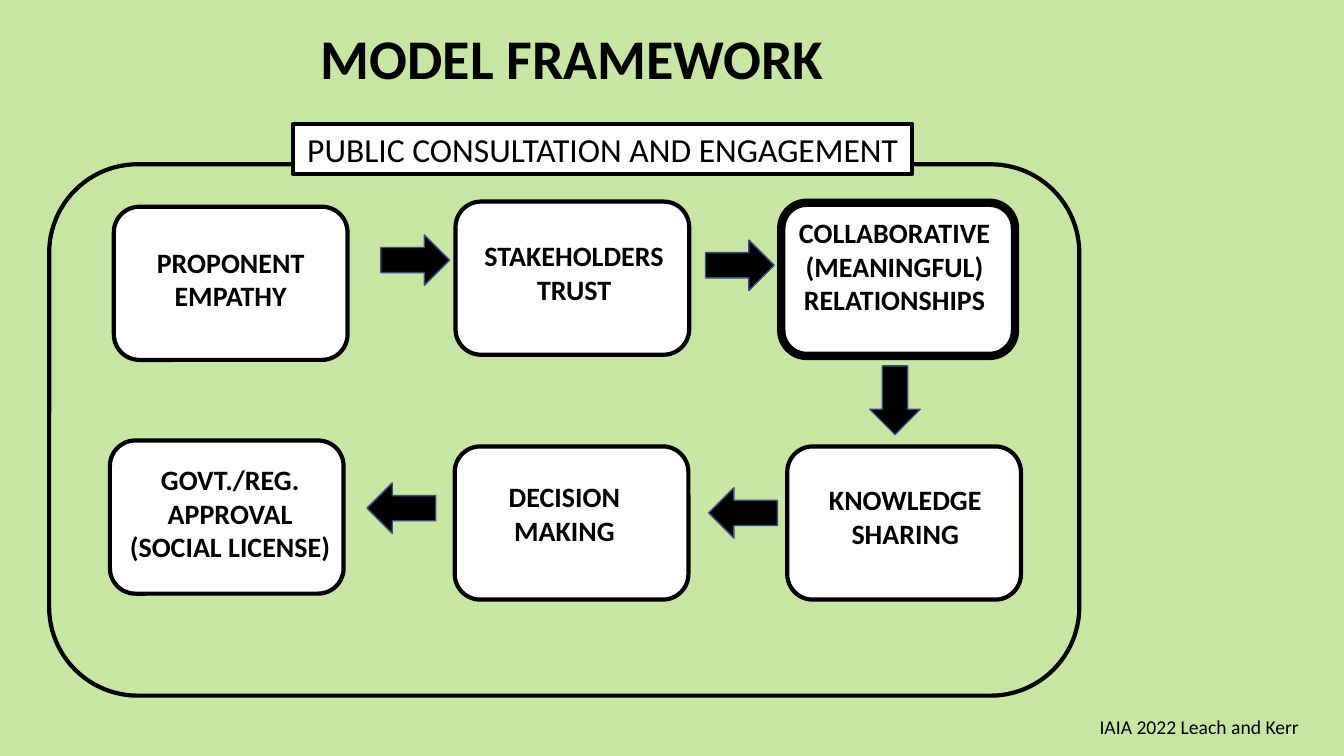
from pptx import Presentation, util as u
from pptx.dml.color import RGBColor
from pptx.enum import shapes, text

SHAPE = shapes.MSO_SHAPE
CENTER, LEFT = text.PP_ALIGN.CENTER, text.PP_ALIGN.LEFT
BLACK, WHITE, GREEN, NAVY = "000000", "FFFFFF", "C7E6A4", "374B7F"


def color(value):
    return RGBColor.from_string(value)


class Diagram:
    """Holds the font, the common sizes and the current slide."""
    font = "Calibri"
    step_size = (5.89, 3.86)
    arrow_size = (1.73, 1.27)

    def __init__(self, slide):
        self.slide = slide
        slide.background.fill.solid()
        slide.background.fill.fore_color.rgb = color(GREEN)

    def shape(self, kind, box, fill=None, line=BLACK, weight=3):
        shape = self.slide.shapes.add_shape(kind, *map(u.Cm, box))
        shape.shadow.inherit = False
        if fill:
            shape.fill.solid()
            shape.fill.fore_color.rgb = color(fill)
        else:
            shape.fill.background()
        shape.line.color.rgb = color(line)
        shape.line.width = u.Pt(weight)
        return shape

    def set_words(self, shape, words, size, bold=False, align=CENTER):
        frame = shape.text_frame
        frame.text = words
        frame.word_wrap = True
        frame.vertical_anchor = text.MSO_ANCHOR.TOP
        for paragraph in frame.paragraphs:
            paragraph.alignment = align
            for run in paragraph.runs:
                run.font.name = self.font
                run.font.size = u.Pt(size)
                run.font.bold = bold
                run.font.color.rgb = color(BLACK)

    def label(self, box, words, size=20, bold=True, align=CENTER):
        shape = self.slide.shapes.add_textbox(*map(u.Cm, box))
        self.set_words(shape, words, size, bold, align)

    def step(self, position, label_box, words, weight=3):
        self.shape(SHAPE.ROUNDED_RECTANGLE, position + self.step_size, WHITE, weight=weight)
        self.label(label_box, words)

    def arrow(self, position, rotation):
        arrow = self.shape(SHAPE.RIGHT_ARROW, position + self.arrow_size, BLACK, NAVY, 1)
        arrow.rotation = rotation


# Steps in reading order: corner, label box, words, outline weight
STEPS = [
    ((2.87, 5.21), (3.58, 6.05, 4.47, 1.96), "PROPONENT EMPATHY", 3),
    ((11.48, 5.08), (11.79, 5.89, 5.36, 1.96), "STAKEHOLDERS\nTRUST", 3),
    ((19.69, 5.11), (19.84, 5.31, 5.41, 2.82),
     "COLLABORATIVE\n(MEANINGFUL)\nRELATIONSHIPS", 6),
    ((19.84, 11.25), (20.4, 12.04, 4.83, 1.96), "KNOWLEDGE\nSHARING", 3),
    ((11.46, 11.25), (12.47, 11.96, 3.51, 1.96), "DECISION\nMAKING", 3),
    ((2.77, 11.1), (2.84, 11.53, 5.92, 2.82),
     "GOVT./REG. APPROVAL\n(SOCIAL LICENSE)", 3),
]

# Arrows between the steps: corner, rotation
ARROWS = [
    ((9.6, 5.92), 0),
    ((17.78, 6.05), 0),
    ((21.69, 9.45), 90),
    ((17.86, 12.29), 180),
    ((9.25, 12.17), 180),
]


def main():
    presentation = Presentation()
    presentation.slide_width = u.Cm(33.87)
    presentation.slide_height = u.Cm(19.05)
    diagram = Diagram(presentation.slides.add_slide(presentation.slide_layouts[6]))

    # Title
    diagram.label((7.84, 0.48, 13.89, 1.96), "MODEL FRAMEWORK", 40, align=LEFT)

    # Frame with its banner
    diagram.shape(SHAPE.ROUNDED_RECTANGLE, (1.24, 4.14, 25.96, 13.39))
    banner = diagram.shape(SHAPE.RECTANGLE, (7.39, 3.12, 15.6, 1.27), WHITE)
    diagram.set_words(banner, "PUBLIC CONSULTATION AND ENGAGEMENT", 24)

    # Process
    for step in STEPS:
        diagram.step(*step)
    for arrow in ARROWS:
        diagram.arrow(*arrow)

    # Credit
    diagram.label((27.46, 17.88, 5.66, 0.86), "IAIA 2022 Leach and Kerr", 14, False, LEFT)

    presentation.save("out.pptx")


if __name__ == "__main__":
    main()
